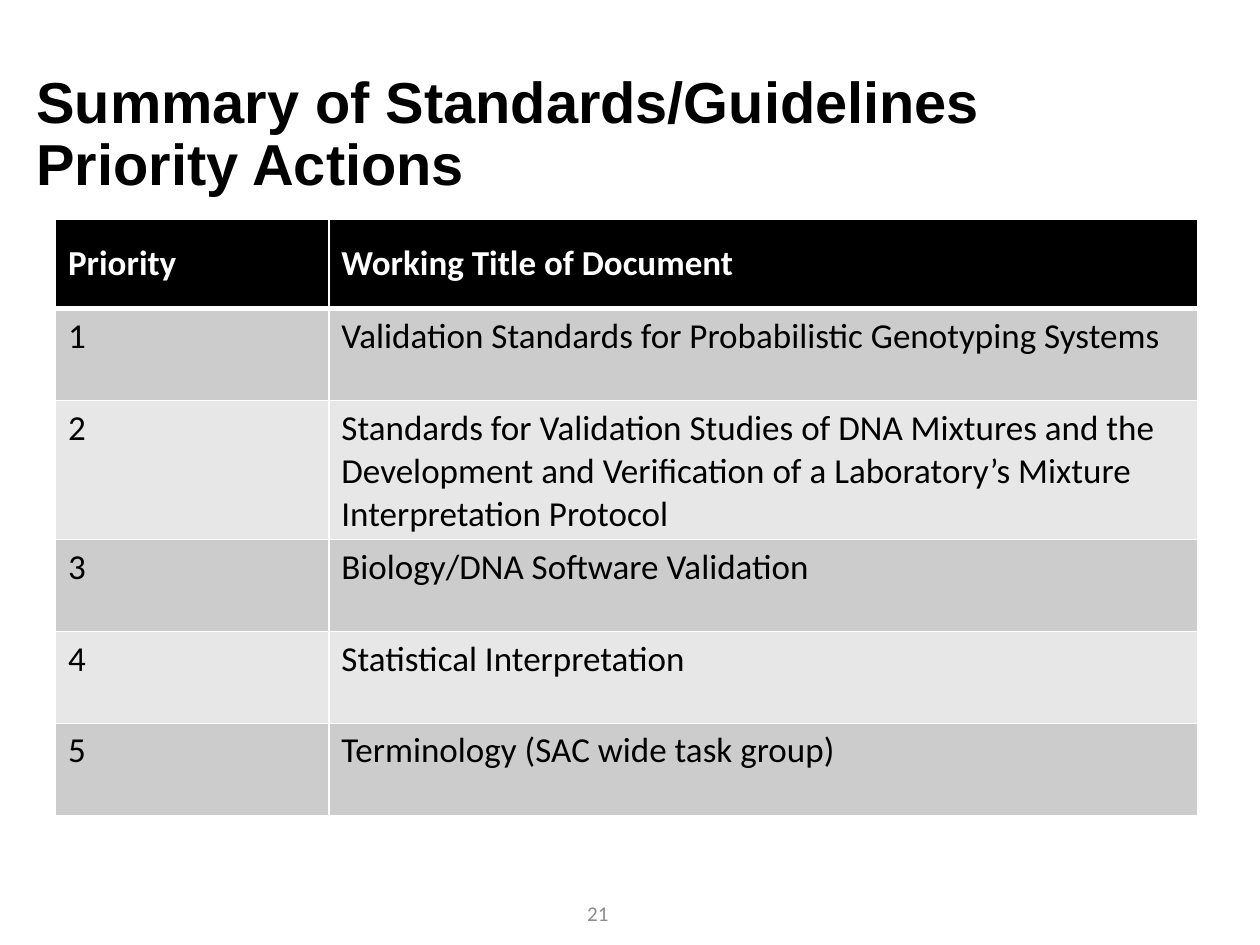
from lxml import etree
from pptx import Presentation
from pptx.dml.color import RGBColor
from pptx.enum import text as t
from pptx.oxml import ns
from pptx.util import Inches, Pt

BLACK = RGBColor(0x00, 0x00, 0x00)
WHITE = RGBColor(0xFF, 0xFF, 0xFF)
BAND_DARK = RGBColor(0xCC, 0xCC, 0xCC)
BAND_LIGHT = RGBColor(0xE7, 0xE7, 0xE7)
NUMBER_GRAY = RGBColor(0x8C, 0x8C, 0x8C)

HEADINGS = ("Priority", "Working Title of Document")
DOCUMENTS = (
    "Validation Standards for Probabilistic Genotyping Systems",
    "Standards for Validation Studies of DNA Mixtures and the Development "
    "and Verification of a Laboratory’s Mixture Interpretation Protocol",
    "Biology/DNA Software Validation",
    "Statistical Interpretation",
    "Terminology (SAC wide task group)",
)


def write(frame, words, size=20, font="Calibri", color=BLACK, bold=False,
          align=t.PP_ALIGN.LEFT, spacing=None):
    frame.word_wrap = True
    paragraph = frame.paragraphs[0]
    paragraph.alignment = align
    if spacing:
        paragraph.line_spacing = spacing
    run = paragraph.add_run()
    run.text = words
    run.font.size = Pt(size)
    run.font.name = font
    run.font.bold = bold
    run.font.color.rgb = color


def add_text(slide, box, words, **style):
    frame = slide.shapes.add_textbox(*map(Inches, box)).text_frame
    frame.vertical_anchor = t.MSO_ANCHOR.MIDDLE
    write(frame, words, **style)


def set_borders(cell, bottom=1):
    properties = cell._tc.get_or_add_tcPr()
    widths = {"lnL": 1, "lnR": 1, "lnT": 1, "lnB": bottom}
    # Border lines come before the fill in a cell's properties
    for place, (side, width) in enumerate(widths.items()):
        line = etree.Element(ns.qn(f"a:{side}"), w=str(Pt(width)))
        fill = etree.SubElement(line, ns.qn("a:solidFill"))
        etree.SubElement(fill, ns.qn("a:srgbClr"), val=str(WHITE))
        properties.insert(place, line)


def add_priority_table(slide, box):
    left, top, width, height = box
    header_height, priority_width = 0.71, 2.17
    rows = [HEADINGS] + [(str(n), name) for n, name in enumerate(DOCUMENTS, 1)]
    table = slide.shapes.add_table(len(rows), len(HEADINGS),
                                   *map(Inches, box)).table
    table.columns[0].width = Inches(priority_width)
    table.columns[1].width = Inches(width - priority_width)
    row_height = (height - header_height) / len(DOCUMENTS)

    for r, values in enumerate(rows):
        header = r == 0
        table.rows[r].height = Inches(header_height if header else row_height)
        band = BLACK if header else (BAND_DARK if r % 2 else BAND_LIGHT)
        for c, words in enumerate(values):
            cell = table.cell(r, c)
            cell.fill.solid()
            cell.fill.fore_color.rgb = band
            cell.vertical_anchor = (t.MSO_ANCHOR.MIDDLE if header
                                    else t.MSO_ANCHOR.TOP)
            # The rule under the header is shared with the first row's top
            set_borders(cell, bottom=3 if header else 1)
            write(cell.text_frame, words, bold=header,
                  color=WHITE if header else BLACK)
    # Let the header's thick rule show over the row below
    for cell in table.rows[1].cells:
        cell._tc.tcPr.find(ns.qn("a:lnT")).set("w", str(Pt(3)))


def main():
    deck = Presentation()
    deck.slide_width, deck.slide_height = Inches(10), Inches(7.5)
    slide = deck.slides.add_slide(deck.slide_layouts[6])

    # Title
    add_text(slide, (0.19, 0.35, 8.62, 1.45),
             "Summary of Standards/Guidelines Priority Actions",
             size=33, font="Arial", bold=True, spacing=0.9)
    # Priorities
    add_priority_table(slide, (0.44, 1.74, 9.07, 4.36))
    # Slide number
    add_text(slide, (3.62, 7.05, 2.25, 0.4), "21", size=12,
             color=NUMBER_GRAY, align=t.PP_ALIGN.CENTER)

    deck.save("out.pptx")


if __name__ == "__main__":
    main()
